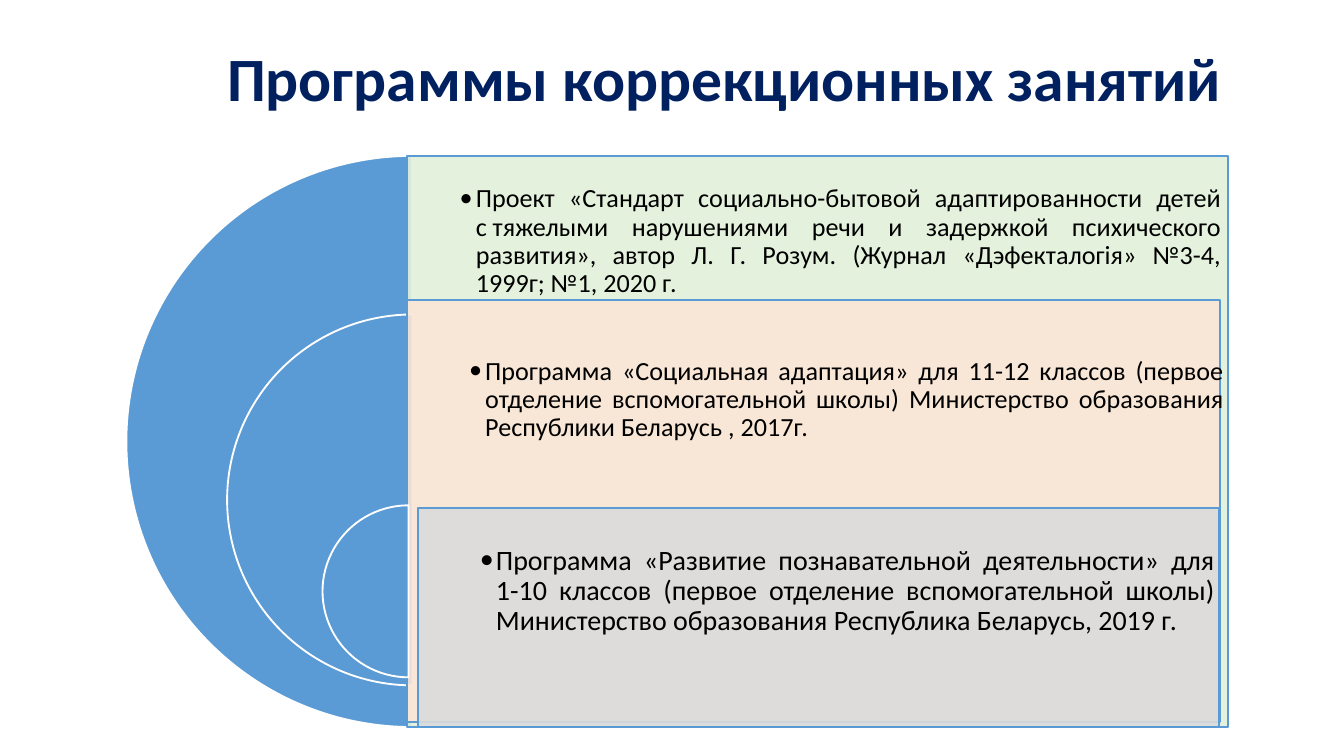
from dataclasses import dataclass
from lxml import etree
from pptx import Presentation
from pptx import util as u
from pptx.dml.color import RGBColor
from pptx.enum import shapes, text
from pptx.oxml.ns import qn

WIDE = u.Inches(10)
HIGH = WIDE * 9 // 16
UNIT = WIDE / 100
BLUE, WHITE, NAVY, BLACK = "5B9BD5", "FFFFFF", "002060", "000000"
FACE = "Calibri"
HARD = chr(160)


@dataclass
class Box:
    x: float
    y: float
    w: float
    h: float

    def spans(self) -> list[int]:
        return [round(v * UNIT) for v in (self.x, self.y, self.w, self.h)]


@dataclass
class Layer:
    ring: Box
    panel: Box
    fill: str
    label: Box
    inset: float
    points: int
    words: str


LAYERS = [
    Layer(Box(9.4, 11.6, 42.5, 42.5), Box(30.3, 11.6, 61.1, 42.5), "E2F0D9",
          Box(33.5, 11.6, 58.1, 12.8), 0.7, 14,
          "Проект «Стандарт социально-бытовой адаптированности детей "
          f"с{HARD}тяжелыми нарушениями речи и задержкой психического развития», "
          "автор Л. Г. Розум. (Журнал «Дэфекталогiя» №3-4, 1999г; №1, 2020 г."),
    Layer(Box(16.9, 23.4, 27.6, 27.6), Box(30.3, 22.3, 60.5, 31.4), "FBE5D6",
          Box(34.2, 21.8, 57.6, 15.9), 0.7, 14,
          "Программа «Социальная адаптация» для 11-12 классов (первое "
          "отделение вспомогательной школы) Министерство образования "
          "Республики Беларусь , 2017г."),
    Layer(Box(24, 37.6, 12.8, 12.8), Box(31.1, 37.8, 59.6, 16.3), "DBDBDB",
          Box(35.1, 37.6, 55.9, 12.8), 0.6, 15,
          "Программа «Развитие познавательной деятельности» для 1-10 классов "
          "(первое отделение вспомогательной школы) Министерство образования "
          "Республика Беларусь, 2019 г."),
]


def tint(hue: str) -> RGBColor:
    return RGBColor.from_string(hue)


def draw(slide, kind, box: Box, fill: str, edge: str):
    shape = slide.shapes.add_shape(kind, *box.spans())
    shape.shadow.inherit = False
    shape.fill.solid()
    shape.fill.fore_color.rgb = tint(fill)
    shape.line.color.rgb = tint(edge)
    shape.line.width = u.Pt(1)
    return shape


def style(para, points: int, hue: str, bold: bool = False) -> None:
    para.line_spacing = 0.9
    para.font.name = FACE
    para.font.size = u.Pt(points)
    para.font.bold = bold
    para.font.color.rgb = tint(hue)


def pad(frame, side: float, edge: float) -> None:
    frame.word_wrap = True
    frame.auto_size = text.MSO_AUTO_SIZE.NONE
    frame.vertical_anchor = text.MSO_ANCHOR.MIDDLE
    frame.margin_left = frame.margin_right = round(side * UNIT)
    frame.margin_top = frame.margin_bottom = round(edge * UNIT)


def head(slide) -> None:
    title = slide.shapes.title
    title.left, title.top, title.width, title.height = Box(6.9, 1.4, 86.2, 9.4).spans()
    frame = title.text_frame
    pad(frame, 0.7, 0.4)
    frame.margin_left = round(10 * UNIT)
    para = frame.paragraphs[0]
    para.text = "Программы коррекционных занятий"
    para.alignment = text.PP_ALIGN.LEFT
    style(para, 33, NAVY, True)


def back(slide, layer: Layer) -> None:
    pie = draw(slide, shapes.MSO_SHAPE.PIE, layer.ring, BLUE, WHITE)
    pie.adjustments[0], pie.adjustments[1] = 54, 162
    panel = draw(slide, shapes.MSO_SHAPE.RECTANGLE, layer.panel, layer.fill, BLUE)
    color = panel.fill._xPr.find(qn("a:solidFill"))[0]
    etree.SubElement(color, qn("a:alpha"), val="90000")


def label(slide, layer: Layer) -> None:
    frame = slide.shapes.add_textbox(*layer.label.spans()).text_frame
    pad(frame, layer.inset, layer.inset)
    para = frame.paragraphs[0]
    para.text = layer.words
    para.level = 1
    para.alignment = text.PP_ALIGN.JUSTIFY
    props = para._p.get_or_add_pPr()
    props.set("marL", str(round(1.2 * UNIT)))
    props.set("indent", str(round(-1.2 * UNIT)))
    etree.SubElement(props, qn("a:buFont"), typeface=FACE)
    etree.SubElement(props, qn("a:buChar"), char="•")
    style(para, layer.points, BLACK)


def main() -> None:
    deck = Presentation()
    deck.slide_width, deck.slide_height = WIDE, HIGH
    slide = deck.slides.add_slide(deck.slide_layouts[5])
    head(slide)
    for layer in LAYERS:
        back(slide, layer)
    for layer in LAYERS:
        label(slide, layer)
    deck.save("out.pptx")


if __name__ == "__main__":
    main()
